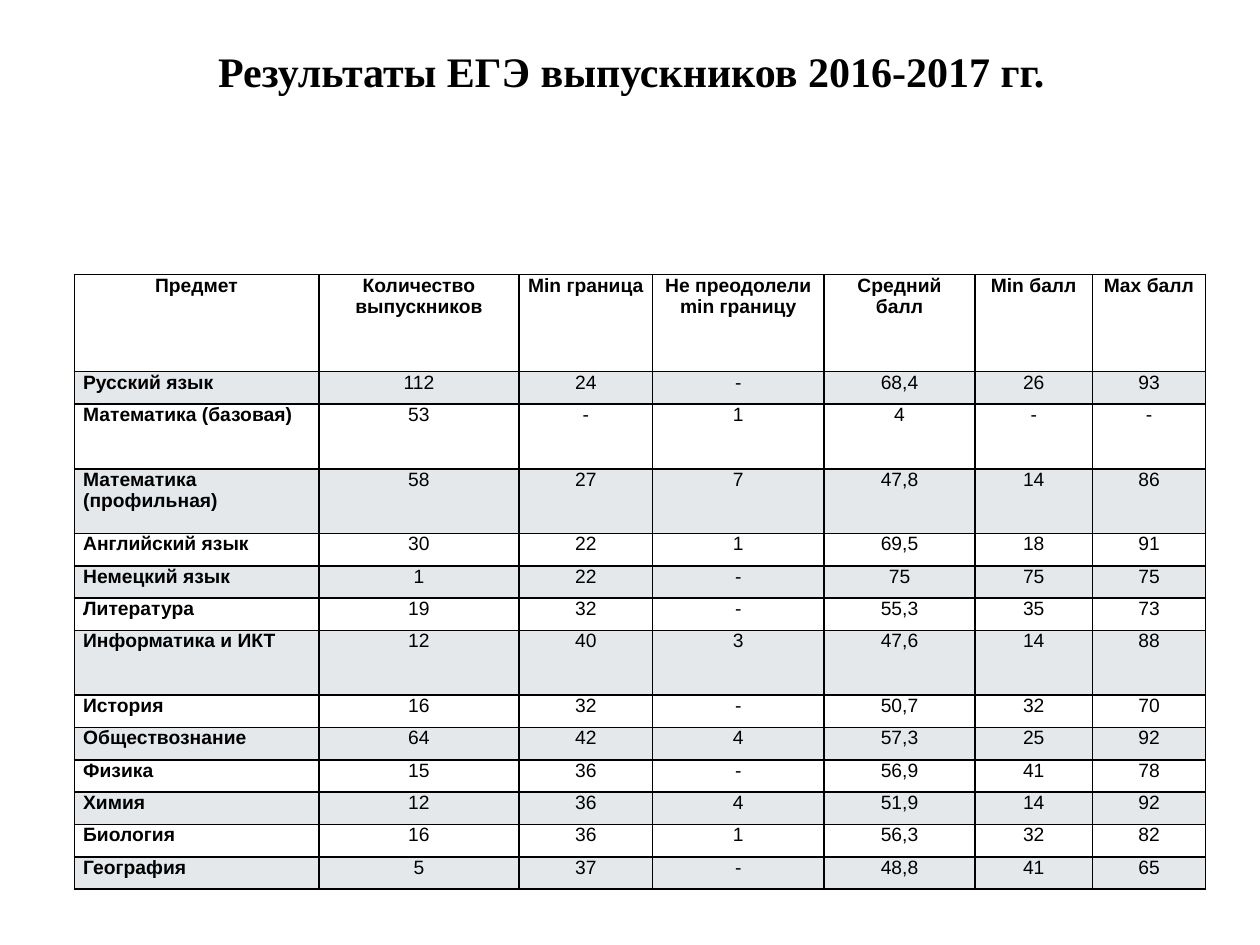
from dataclasses import dataclass

from lxml import etree
from pptx import Presentation
from pptx.dml.color import RGBColor
from pptx.enum.text import MSO_ANCHOR, PP_ALIGN
from pptx.oxml.ns import qn
from pptx.util import Inches, Pt

TOP = MSO_ANCHOR.TOP
LEFT, MID = PP_ALIGN.LEFT, PP_ALIGN.CENTER


@dataclass(frozen=True)
class Theme:
    """Colours, fonts and type sizes."""
    ink: str = "000000"
    band: str = "78909C"
    tint: int = 20
    head: str = "Times New Roman"
    body: str = "Arial"
    big: int = 24
    small: int = 11
    rule: int = 1


THEME = Theme()
WIDE, HIGH = 10, 7.5
COLS = (1.94, 1.59, 1.06, 1.36, 1.2, 0.93, 0.9)
UNITS = (3, 1, 2, 2, 1, 1, 1, 2, 1, 1, 1, 1, 1, 1)
UNIT = 4.88 / sum(UNITS)
TITLE = "Результаты ЕГЭ выпускников 2016-2017 гг."
ROWS = (
    ("Предмет", "Количество выпускников", "Min граница",
     "Не преодолели min границу", "Средний балл", "Min балл", "Max балл"),
    ("Русский язык", "112", "24", "-", "68,4", "26", "93"),
    ("Математика (базовая)", "53", "-", "1", "4", "-", "-"),
    ("Математика (профильная)", "58", "27", "7", "47,8", "14", "86"),
    ("Английский язык", "30", "22", "1", "69,5", "18", "91"),
    ("Немецкий язык", "1", "22", "-", "75", "75", "75"),
    ("Литература", "19", "32", "-", "55,3", "35", "73"),
    ("Информатика и ИКТ", "12", "40", "3", "47,6", "14", "88"),
    ("История", "16", "32", "-", "50,7", "32", "70"),
    ("Обществознание", "64", "42", "4", "57,3", "25", "92"),
    ("Физика", "15", "36", "-", "56,9", "41", "78"),
    ("Химия", "12", "36", "4", "51,9", "14", "92"),
    ("Биология", "16", "36", "1", "56,3", "32", "82"),
    ("География", "5", "37", "-", "48,8", "41", "65"),
)


def write(frame, text, face, size, bold, align):
    """Put one styled paragraph into a text frame."""
    frame.text = text
    para = frame.paragraphs[0]
    para.alignment = align
    font = para.runs[0].font
    font.name, font.size, font.bold = face, Pt(size), bold
    font.color.rgb = RGBColor.from_string(THEME.ink)


def add_title(slide):
    """Add the heading across the top of the slide."""
    box = slide.shapes.add_textbox(
        Inches(0.02), Inches(0.36), Inches(WIDE - 0.02), Inches(0.8))
    frame = box.text_frame
    frame.word_wrap = True
    frame.vertical_anchor = TOP
    frame.margin_top = 0
    write(frame, TITLE, THEME.head, THEME.big, True, MID)


def add_rules(cell):
    """Draw a thin line on each side of a cell."""
    props = cell._tc.get_or_add_tcPr()
    for side in ("a:lnL", "a:lnR", "a:lnT", "a:lnB"):
        line = etree.SubElement(props, qn(side), w=str(Pt(THEME.rule)))
        fill = etree.SubElement(line, qn("a:solidFill"))
        etree.SubElement(fill, qn("a:srgbClr"), val=THEME.ink)


def shade(cell, banded):
    """Tint a banded cell and leave the others clear."""
    if not banded:
        cell.fill.background()
        return
    cell.fill.solid()
    cell.fill.fore_color.rgb = RGBColor.from_string(THEME.band)
    tone = cell._tc.tcPr.find(qn("a:solidFill")).find(qn("a:srgbClr"))
    etree.SubElement(tone, qn("a:alpha"), val=str(THEME.tint * 1000))


def style_cell(cell, text, row, col):
    """Fill a cell with its text, lines and tint."""
    cell.margin_left = cell.margin_right = Inches(0.07)
    cell.margin_top = cell.margin_bottom = 0
    cell.vertical_anchor = TOP
    align = LEFT if row and not col else MID
    write(cell.text_frame, text, THEME.body, THEME.small,
          not row or not col, align)
    add_rules(cell)
    shade(cell, row % 2 == 1)


def add_scores(slide):
    """Add the table of exam results."""
    table = slide.shapes.add_table(
        len(ROWS), len(COLS), Inches(0.59), Inches(2.18),
        Inches(sum(COLS)), Inches(UNIT * sum(UNITS))).table
    table.first_row = table.horz_banding = False
    for col, width in zip(table.columns, COLS):
        col.width = Inches(width)
    for row, units in zip(table.rows, UNITS):
        row.height = Inches(UNIT * units)
    for r, texts in enumerate(ROWS):
        for c, text in enumerate(texts):
            style_cell(table.cell(r, c), text, r, c)


def main():
    """Build and save the slide."""
    deck = Presentation()
    deck.slide_width, deck.slide_height = Inches(WIDE), Inches(HIGH)
    slide = deck.slides.add_slide(deck.slide_layouts[6])
    add_title(slide)
    add_scores(slide)
    deck.save("out.pptx")


if __name__ == "__main__":
    main()
